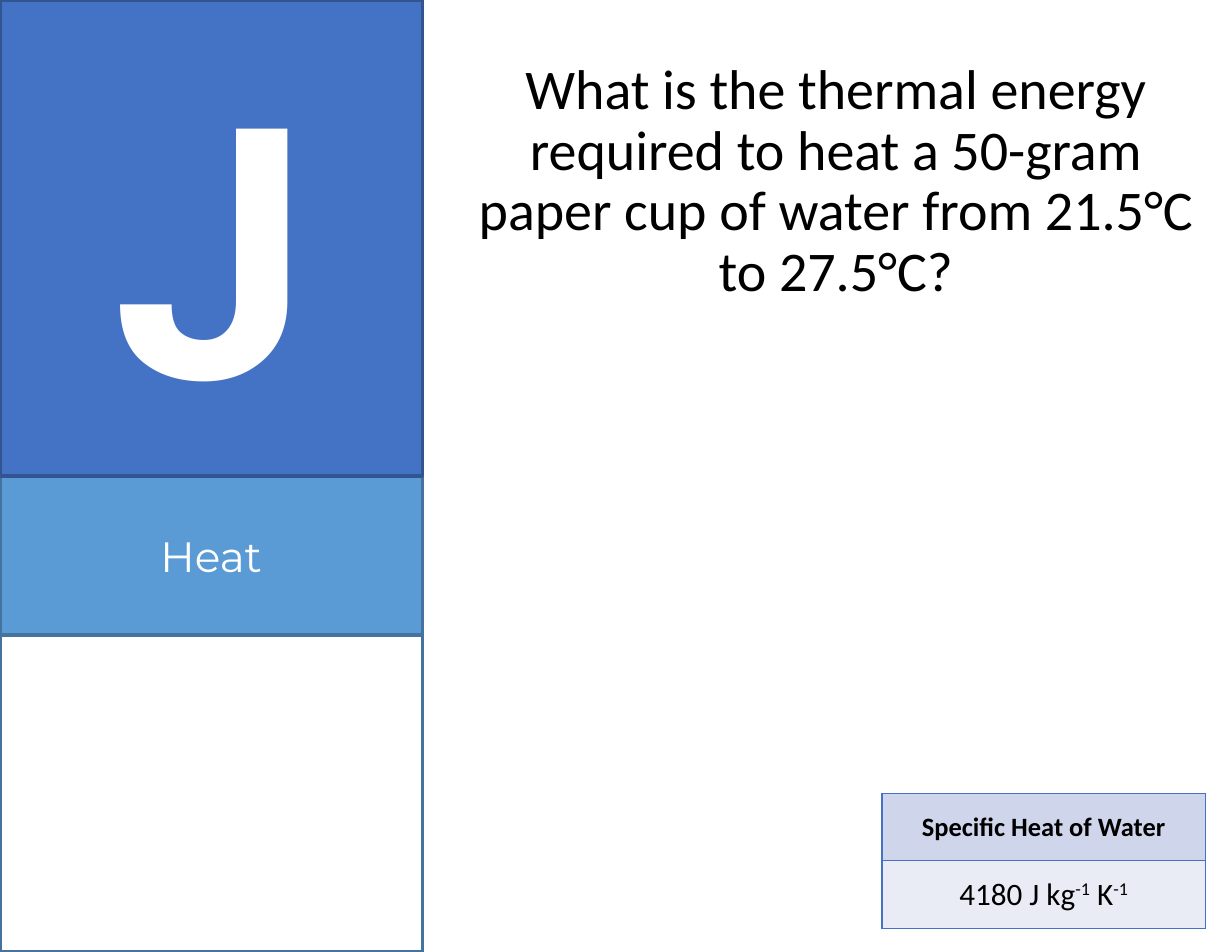
from lxml import etree
from pptx import Presentation
from pptx.dml.color import RGBColor
from pptx.enum.shapes import MSO_SHAPE
from pptx.enum.text import MSO_ANCHOR, PP_ALIGN
from pptx.oxml.ns import qn
from pptx.util import Cm, Pt

RECT = MSO_SHAPE.RECTANGLE
CENTER = PP_ALIGN.CENTER
TOP, MIDDLE = MSO_ANCHOR.TOP, MSO_ANCHOR.MIDDLE

COLORS = {
    "black": "000000", "white": "FFFFFF",
    "blue": "4472C4", "blue_edge": "325491",
    "sky": "5B9BD5", "sky_edge": "43739E",
    "header": "CFD5EA", "body": "E9EBF5",
}
QUESTION = ("What is the thermal energy required to heat a 50-gram "
            "paper cup of water from 21.5°C to 27.5°C?")
# Side panels from top to bottom: text, font, size, bold, fill, line, height in cm
PANELS = [
    ("J", "Roboto", 225.5, True, "blue", "blue_edge", 10.8),
    ("Heat", "Montserrat", 27.2, False, "sky", "sky_edge", 3.6),
    ("", "Montserrat", 27.2, False, "white", "sky_edge", 7.19),
]
PANEL_WIDTH = 9.58
# Table rows: runs as (text, is superscript), size, bold, fill
ROWS = [
    ([("Specific Heat of Water", False)], 17, True, "header"),
    ([("4180 J kg", False), ("-1", True), (" K", False), ("-1", True)],
     20, False, "body"),
]
ROW_HEIGHT = 1.53


def rgb(name):
    return RGBColor.from_string(COLORS[name])


def style(p, font, size, color, bold=False):
    p.alignment = CENTER
    p.font.name = font
    p.font.size = Pt(size)
    p.font.bold = bold
    p.font.color.rgb = rgb(color)


def add_panel(slide, top, text, font, size, bold, fill, line, height):
    sp = slide.shapes.add_shape(RECT, 0, Cm(top), Cm(PANEL_WIDTH), Cm(height))
    sp.shadow.inherit = False
    sp.fill.solid()
    sp.fill.fore_color.rgb = rgb(fill)
    sp.line.color.rgb = rgb(line)
    sp.line.width = Pt(2.25)
    if text:
        tf = sp.text_frame
        tf.vertical_anchor = MIDDLE
        tf.text = text
        style(tf.paragraphs[0], font, size, "white", bold)


def add_borders(cell, color):
    tc_pr = cell._tc.get_or_add_tcPr()
    for i, side in enumerate(("a:lnL", "a:lnR", "a:lnT", "a:lnB")):
        ln = etree.Element(qn(side), w=str(Pt(1)))
        fill = etree.SubElement(ln, qn("a:solidFill"))
        etree.SubElement(fill, qn("a:srgbClr"), val=COLORS[color])
        tc_pr.insert(i, ln)


def fill_cell(cell, runs, size, bold, fill):
    cell.vertical_anchor = MIDDLE
    cell.margin_left = cell.margin_right = Cm(0.28)
    cell.margin_top = cell.margin_bottom = Cm(0.15)
    cell.fill.solid()
    cell.fill.fore_color.rgb = rgb(fill)
    add_borders(cell, "blue")
    p = cell.text_frame.paragraphs[0]
    style(p, "Calibri", size, "black", bold)
    for text, superscript in runs:
        r = p.add_run()
        r.text = text
        # Run-level values outrank the table style
        r.font.size, r.font.bold = Pt(size), bold
        if superscript:
            r._r.get_or_add_rPr().set("baseline", "30000")


prs = Presentation()
prs.slide_width, prs.slide_height = Cm(27.94), Cm(21.59)
slide = prs.slides.add_slide(prs.slide_layouts[6])

question = slide.shapes.add_textbox(Cm(10.59), Cm(1.27), Cm(16.74), Cm(6.4))
tf = question.text_frame
tf.word_wrap = True
tf.vertical_anchor = TOP
tf.text = QUESTION
style(tf.paragraphs[0], "Calibri", 36, "black")
tf.paragraphs[0].line_spacing = 0.9

table = slide.shapes.add_table(len(ROWS), 1, Cm(20), Cm(17.99), Cm(7.34),
                               Cm(ROW_HEIGHT * len(ROWS))).table
table.first_row = table.horz_banding = False
for i, row in enumerate(ROWS):
    table.rows[i].height = Cm(ROW_HEIGHT)
    fill_cell(table.cell(i, 0), *row)

# Later panels lie on top, so the largest one is drawn last
tops = [sum(panel[-1] for panel in PANELS[:i]) for i in range(len(PANELS))]
for i in (1, 2, 0):
    add_panel(slide, tops[i], *PANELS[i])

prs.save("out.pptx")
